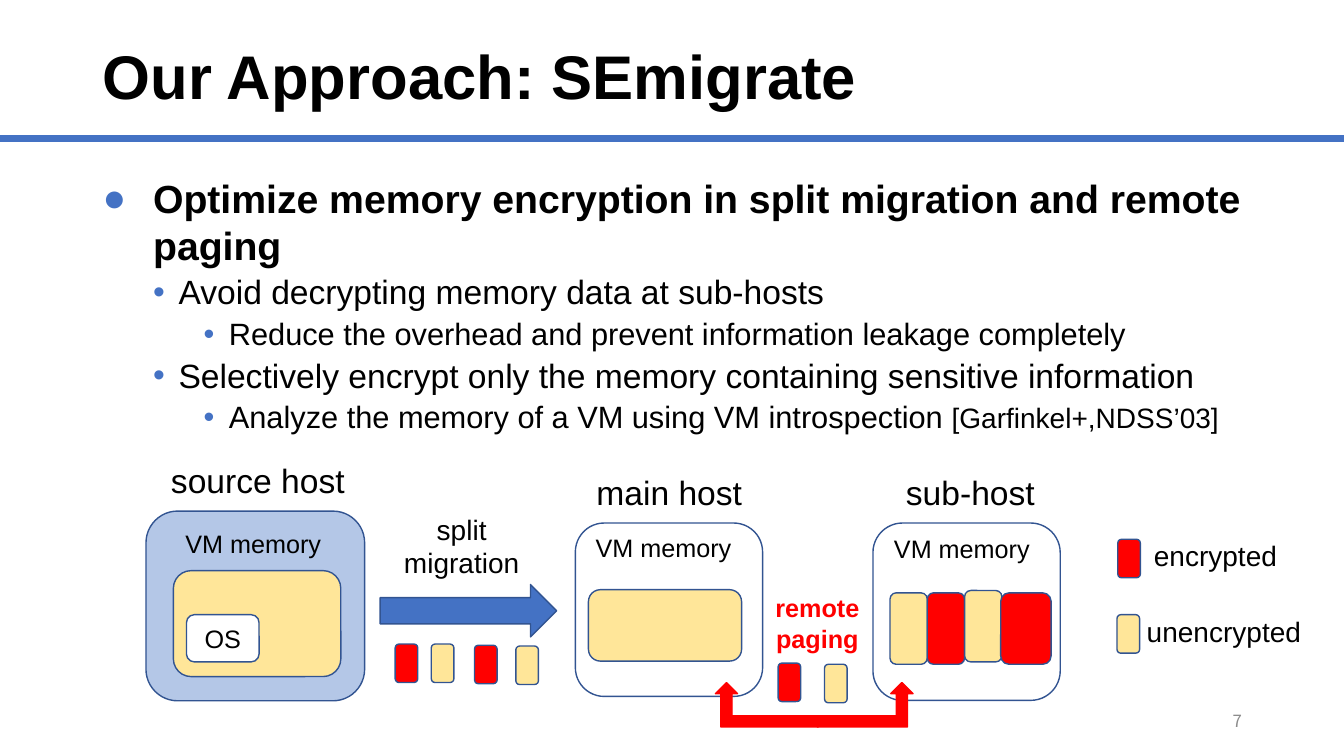
from dataclasses import dataclass

from lxml import etree
from pptx import Presentation
from pptx.dml.color import RGBColor
from pptx.enum.shapes import MSO_CONNECTOR, MSO_SHAPE
from pptx.enum.text import MSO_ANCHOR, MSO_AUTO_SIZE, PP_ALIGN
from pptx.oxml.ns import qn
from pptx.util import Cm, Pt

ROUNDED = MSO_SHAPE.ROUNDED_RECTANGLE
RIGHT_ARROW = MSO_SHAPE.RIGHT_ARROW
BENT_ARROW = MSO_SHAPE.BENT_UP_ARROW
STRAIGHT = MSO_CONNECTOR.STRAIGHT
LEFT, CENTER, RIGHT = PP_ALIGN.LEFT, PP_ALIGN.CENTER, PP_ALIGN.RIGHT
TOP, MIDDLE = MSO_ANCHOR.TOP, MSO_ANCHOR.MIDDLE
FIT_TEXT = MSO_AUTO_SIZE.SHAPE_TO_FIT_TEXT


@dataclass(frozen=True)
class Theme:
    font: str = "Arial"
    number_font: str = "Noto Sans CJK JP"
    black: str = "000000"
    white: str = "FFFFFF"
    gray: str = "8C8C8C"
    accent: str = "4472C4"
    outline: str = "325491"
    source: str = "B4C7E7"
    encrypted: str = "FF0000"
    unencrypted: str = "FFE699"
    title: int = 44
    lead: int = 28
    heading: int = 24
    detail: int = 22
    body: int = 20
    small: int = 18
    number: int = 12


THEME = Theme()
PAGE_SIZE = (0.57, 0.97)

# Level, space before, line spacing, left margin, hanging indent, bullet
LEAD = (0, 10, 1.0, 1.27, 1.27, "●")
POINT = (1, 5, 0.9, 1.91, 0.64, "•")
DETAIL = (2, 5, 0.9, 3.18, 0.64, "•")
OUTLINE = [
    (LEAD, [("Optimize memory encryption in split migration and remote paging", THEME.lead)]),
    (POINT, [("Avoid decrypting memory data at sub-hosts", THEME.heading)]),
    (DETAIL, [("Reduce the overhead and prevent information leakage completely", THEME.detail)]),
    (POINT, [("Selectively encrypt only the memory containing sensitive information",
              THEME.heading)]),
    (DETAIL, [("Analyze the memory of a VM using VM introspection ", THEME.detail),
              ("[Garfinkel+,NDSS’03]", THEME.body)]),
]


def add_run(paragraph, text, size, color=THEME.black, bold=False, font=THEME.font):
    run = paragraph.add_run()
    run.text = text
    run.font.name = font
    run.font.size = Pt(size)
    run.font.bold = bold
    run.font.color.rgb = RGBColor.from_string(color)


def add_text_box(slide, box, anchor=TOP, wrap=True):
    frame = slide.shapes.add_textbox(*map(Cm, box)).text_frame
    frame.word_wrap = wrap
    frame.vertical_anchor = anchor
    return frame


def add_label(slide, box, lines, size, align=LEFT, **style):
    """Add an unwrapped caption with one paragraph per line."""
    frame = add_text_box(slide, box, wrap=False)
    frame.auto_size = FIT_TEXT
    for index, line in enumerate(lines):
        paragraph = frame.add_paragraph() if index else frame.paragraphs[0]
        paragraph.alignment = align
        add_run(paragraph, line, size, **style)


def add_block(slide, box, fill, kind=ROUNDED, line=THEME.outline):
    shape = slide.shapes.add_shape(kind, *map(Cm, box))
    shape.shadow.inherit = False
    shape.fill.solid()
    shape.fill.fore_color.rgb = RGBColor.from_string(fill)
    shape.line.color.rgb = RGBColor.from_string(line)
    shape.line.width = Pt(1)
    return shape


def add_page(slide, left, top, fill):
    """Add one small memory page."""
    add_block(slide, (left, top, *PAGE_SIZE), fill)


def add_bullet(paragraph, character, margin, hanging):
    properties = paragraph._p.get_or_add_pPr()
    properties.set("marL", str(Cm(margin)))
    properties.set("indent", str(-Cm(hanging)))
    color = etree.SubElement(properties, qn("a:buClr"))
    etree.SubElement(color, qn("a:srgbClr")).set("val", THEME.accent)
    etree.SubElement(properties, qn("a:buFont")).set("typeface", THEME.font)
    etree.SubElement(properties, qn("a:buChar")).set("char", character)


def add_header(slide):
    rule = slide.shapes.add_connector(STRAIGHT, Cm(0), Cm(3.48), Cm(33.87), Cm(3.48))
    rule.line.color.rgb = RGBColor.from_string(THEME.accent)
    rule.line.width = Pt(5)
    etree.SubElement(rule._element.spPr, qn("a:effectLst"))
    title = add_text_box(slide, (2.34, 0.18, 29.21, 3.66), MIDDLE).paragraphs[0]
    title.line_spacing = 0.9
    add_run(title, "Our Approach: SEmigrate", THEME.title, bold=True)


def add_outline(slide):
    frame = add_text_box(slide, (2.34, 4.27, 29.21, 12.88))
    for index, (style, runs) in enumerate(OUTLINE):
        level, before, spacing, margin, hanging, character = style
        paragraph = frame.add_paragraph() if index else frame.paragraphs[0]
        paragraph.level = level
        paragraph.space_before = Pt(before)
        paragraph.line_spacing = spacing
        add_bullet(paragraph, character, margin, hanging)
        for text, size in runs:
            add_run(paragraph, text, size, bold=level == 0)


def add_host(slide, box, fill, name, name_box, memory_at):
    add_block(slide, box, fill)
    add_label(slide, (*name_box, 1.27), [name], THEME.heading)
    add_label(slide, (*memory_at, 4.06, 1.02), ["VM memory"], THEME.small)


def add_hosts(slide):
    add_host(slide, (3.68, 12.88, 5.51, 4.78), THEME.source,
             "source host", (4.06, 11.46, 4.93), (4.42, 13.18))
    add_host(slide, (14.5, 13.18, 4.72, 4.37), THEME.white,
             "main host", (14.78, 11.76, 4.22), (14.76, 13.28))
    add_host(slide, (22, 13.18, 4.72, 4.47), THEME.white,
             "sub-host", (22.58, 11.76, 3.78), (22.28, 13.31))
    add_block(slide, (4.37, 14.38, 4.22, 2.67), THEME.unencrypted)
    system = add_block(slide, (4.7, 15.49, 1.83, 1.19), THEME.white).text_frame
    system.vertical_anchor = MIDDLE
    system.word_wrap = False
    system.paragraphs[0].alignment = CENTER
    add_run(system.paragraphs[0], "OS", THEME.small)
    add_block(slide, (14.83, 14.86, 3.86, 1.8), THEME.unencrypted)
    for left, top, width, fill in [(22.43, 14.94, 0.94, THEME.unencrypted),
                                   (23.37, 14.94, 0.94, THEME.encrypted),
                                   (24.31, 14.88, 0.94, THEME.unencrypted),
                                   (25.22, 14.94, 1.27, THEME.encrypted)]:
        add_block(slide, (left, top, width, 1.8), fill)


def add_transfers(slide):
    """Add split migration and remote paging, with the pages they move."""
    add_block(slide, (9.58, 14.73, 4.45, 1.32), THEME.accent, RIGHT_ARROW)
    add_label(slide, (9.91, 12.78, 3.45, 1.96), ["split", "migration"], THEME.body, CENTER)
    add_label(slide, (19.28, 14.81, 2.64, 1.8), ["remote", "paging"], THEME.small, CENTER,
              color=THEME.encrypted, bold=True)
    red = THEME.encrypted
    add_block(slide, (20.6, 17.2, 2.41, 1.12), red, BENT_ARROW, red)
    to_main = add_block(slide, (18.03, 17.2, 2.59, 1.12), red, BENT_ARROW, red)
    to_main._element.spPr.get_or_add_xfrm().set("flipH", "1")
    for left, top in [(9.96, 16.23), (11.96, 16.26), (19.61, 16.71)]:
        add_page(slide, left, top, THEME.encrypted)
    for left, top in [(10.87, 16.23), (13, 16.28), (20.78, 16.74)]:
        add_page(slide, left, top, THEME.unencrypted)


def add_legend(slide):
    add_page(slide, 28.17, 13.59, THEME.encrypted)
    add_label(slide, (28.83, 13.44, 3.63, 1.12), ["encrypted"], THEME.body)
    add_page(slide, 28.15, 15.49, THEME.unencrypted)
    add_label(slide, (28.65, 15.37, 4.42, 1.12), ["unencrypted"], THEME.body)


def add_slide_number(slide):
    paragraph = add_text_box(slide, (23.93, 17.65, 7.62, 1.02), MIDDLE).paragraphs[0]
    paragraph.alignment = RIGHT
    add_run(paragraph, "7", THEME.number, THEME.gray, font=THEME.number_font)


def main():
    presentation = Presentation()
    presentation.slide_width, presentation.slide_height = Cm(33.87), Cm(19.05)
    slide = presentation.slides.add_slide(presentation.slide_layouts[6])
    add_header(slide)
    add_outline(slide)
    add_hosts(slide)
    add_transfers(slide)
    add_legend(slide)
    add_slide_number(slide)
    presentation.save("out.pptx")


if __name__ == "__main__":
    main()
